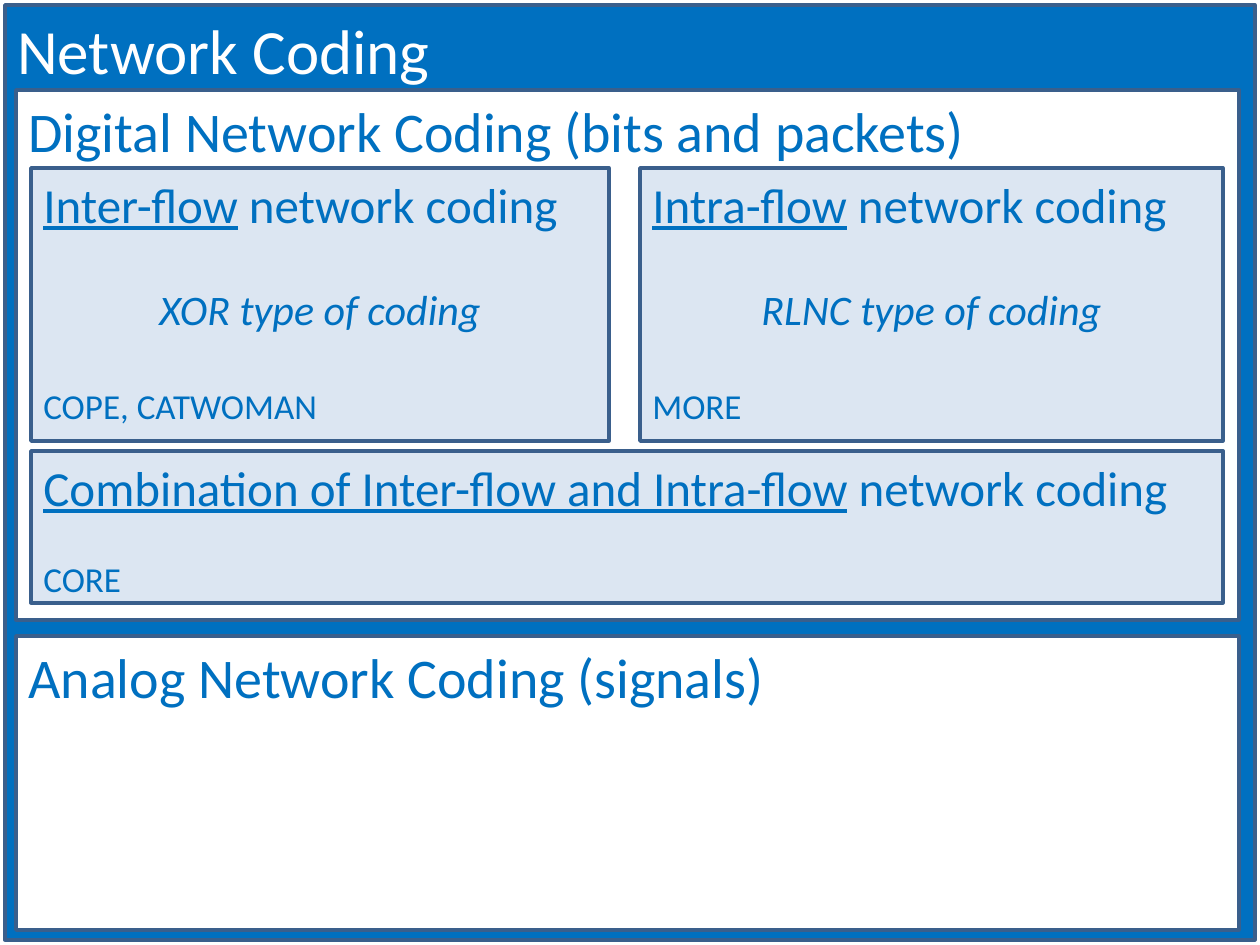
from pptx import Presentation
from pptx.dml.color import RGBColor
from pptx.enum.shapes import MSO_SHAPE as Shape
from pptx.enum.text import MSO_ANCHOR as Anchor, PP_ALIGN as Align
from pptx.util import Pt

PX = 914400 // 126  # EMU per pixel
FONT = "Calibri"
BLUE = RGBColor(0x00, 0x70, 0xC0)
PALE_BLUE = RGBColor(0xDC, 0xE6, 0xF2)
BORDER = RGBColor(0x3A, 0x5F, 0x8C)
WHITE = RGBColor(0xFF, 0xFF, 0xFF)

# Shared edges of the nested boxes
PANEL_LEFT, PANEL_WIDTH = 16, 1223
CARD_LEFT, CARD_RIGHT = 31, 1223


def add_box(slide, left, top, width, height, fill):
    shape = slide.shapes.add_shape(
        Shape.RECTANGLE, *(length * PX for length in (left, top, width, height)))
    shape.shadow.inherit = False
    shape.fill.solid()
    shape.fill.fore_color.rgb = fill
    shape.line.color.rgb = BORDER
    shape.line.width = Pt(2)
    shape.text_frame.word_wrap = True
    shape.text_frame.vertical_anchor = Anchor.TOP
    return shape.text_frame


def format_paragraph(paragraph, size, color=BLUE, align=Align.LEFT, before=0):
    paragraph.alignment = align
    paragraph.space_before = Pt(before)
    paragraph.font.name = FONT
    paragraph.font.size = Pt(size)
    paragraph.font.color.rgb = color


def add_panel(slide, left, top, width, height, title, size, fill, color):
    frame = add_box(slide, left, top, width, height, fill)
    frame.text = title
    format_paragraph(frame.paragraphs[0], size, color)


def add_card(slide, left, top, width, height, flow, protocols, gap, coding=None):
    frame = add_box(slide, left, top, width, height, PALE_BLUE)
    heading = frame.paragraphs[0]
    format_paragraph(heading, 28)
    flow_run = heading.add_run()
    flow_run.text = flow
    flow_run.font.underline = True
    heading.add_run().text = " network coding"

    if coding:
        paragraph = frame.add_paragraph()
        paragraph.text = coding
        format_paragraph(paragraph, 24, align=Align.CENTER, before=gap)
        paragraph.font.italic = True

    paragraph = frame.add_paragraph()
    paragraph.text = protocols
    format_paragraph(paragraph, 20, before=gap)


def main():
    presentation = Presentation()
    presentation.slide_width = 1260 * PX
    presentation.slide_height = 945 * PX
    slide = presentation.slides.add_slide(presentation.slide_layouts[6])

    # Outer frame and its two panels
    add_panel(slide, 5, 5, 1250, 935, "Network Coding", 36, BLUE, WHITE)
    for top, height, title in (
        (90, 530, "Digital Network Coding (bits and packets)"),
        (636, 294, "Analog Network Coding (signals)"),
    ):
        add_panel(slide, PANEL_LEFT, top, PANEL_WIDTH, height, title, 32, WHITE, BLUE)

    # Two kinds of digital coding, side by side
    for left, right, flow, coding, protocols in (
        (CARD_LEFT, 609, "Inter-flow", "XOR type of coding", "COPE, CATWOMAN"),
        (640, CARD_RIGHT, "Intra-flow", "RLNC type of coding", "MORE"),
    ):
        add_card(slide, left, 168, right - left, 273, flow, protocols, 29, coding)

    # Their combination
    add_card(slide, CARD_LEFT, 451, CARD_RIGHT - CARD_LEFT, 152,
             "Combination of Inter-flow and Intra-flow", "CORE", 24)

    presentation.save("out.pptx")


if __name__ == "__main__":
    main()
